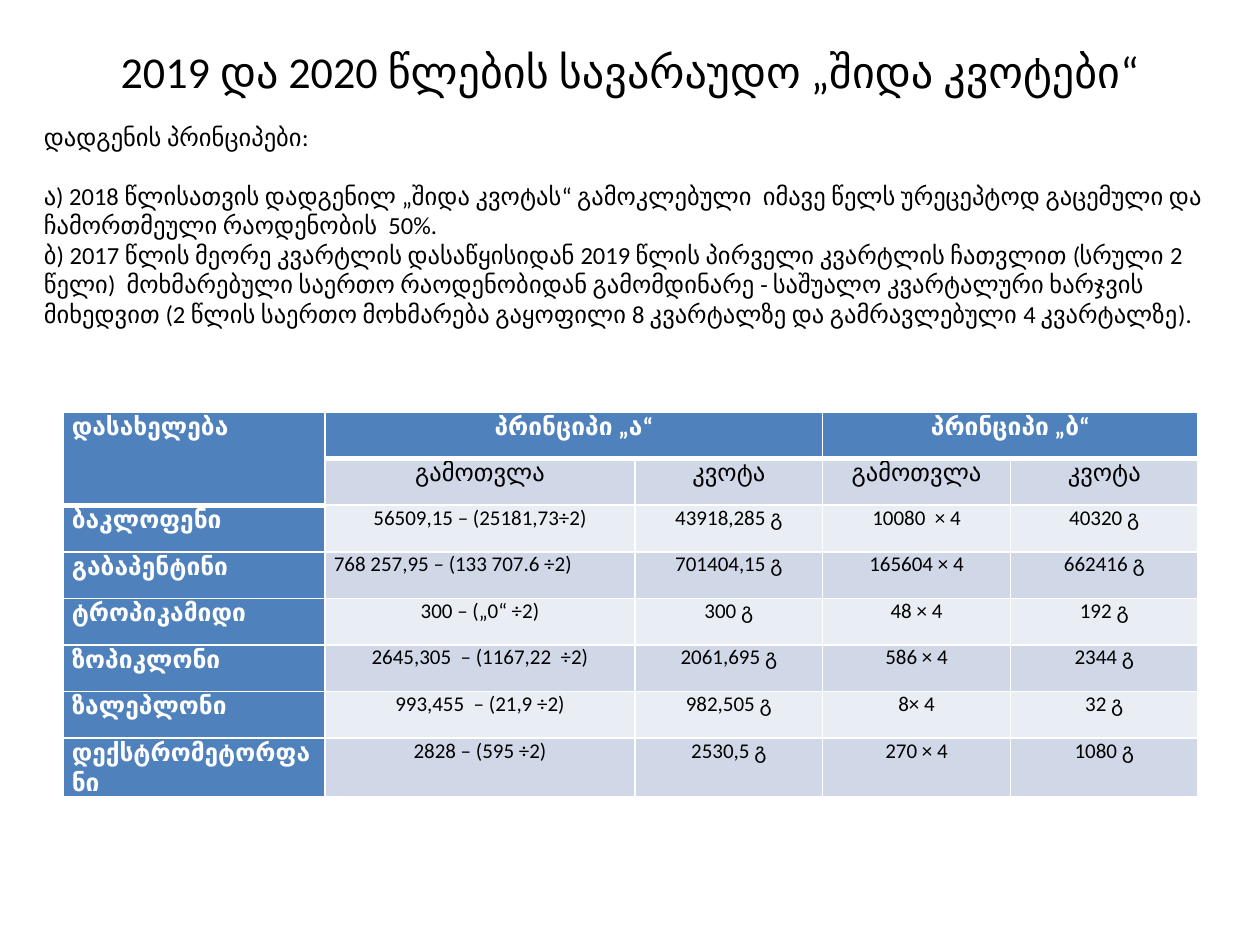
from dataclasses import dataclass

from lxml import etree
from pptx import Presentation
from pptx import util as u
from pptx.dml.color import RGBColor
from pptx.enum import text
from pptx.oxml import ns


@dataclass(frozen=True)
class Theme:
    font: str = "Calibri"
    ink: str = "000000"
    white: str = "FFFFFF"
    head: str = "4F81BD"
    bands: tuple = ("D0D8E8", "E9EDF4")
    title: float = 25.2
    body: float = 14
    value: float = 12
    rule: float = 1
    head_rule: float = 3


T = Theme()
CENTER, JUSTIFY = text.PP_ALIGN.CENTER, text.PP_ALIGN.JUSTIFY

TITLE = "2019 და 2020 წლების სავარაუდო „შიდა კვოტები“"
INTRO = "დადგენის პრინციპები:"
PRINCIPLES = [
    "ა) 2018 წლისათვის დადგენილ „შიდა კვოტას“ გამოკლებული  იმავე წელს ურეცეპტოდ "
    "გაცემული და ჩამორთმეული რაოდენობის  50%.",
    "ბ) 2017 წლის მეორე კვარტლის დასაწყისიდან 2019 წლის პირველი კვარტლის ჩათვლით "
    "(სრული 2 წელი)  მოხმარებული საერთო რაოდენობიდან გამომდინარე - საშუალო "
    "კვარტალური ხარჯვის მიხედვით (2 წლის საერთო მოხმარება გაყოფილი 8 კვარტალზე და "
    "გამრავლებული 4 კვარტალზე).",
]
COLUMNS = [2.08, 2.46, 1.49, 1.49, 1.49]
ROW_HEIGHT = 0.37
GROUPS = {1: "პრინციპი „ა“", 3: "პრინციპი „ბ“"}
ROWS = [
    ["დასახელება", "გამოთვლა", "კვოტა", "გამოთვლა", "კვოტა"],
    ["ბაკლოფენი", "56509,15 – (25181,73÷2)", "43918,285 გ", "10080  × 4", "40320 გ"],
    ["გაბაპენტინი", "768 257,95 – (133 707.6 ÷2)", "701404,15 გ", "165604 × 4", "662416 გ"],
    ["ტროპიკამიდი", "300 – („0“ ÷2)", "300 გ", "48 × 4", "192 გ"],
    ["ზოპიკლონი", "2645,305  – (1167,22  ÷2)", "2061,695 გ", "586 × 4", "2344 გ"],
    ["ზალეპლონი", "993,455  – (21,9 ÷2)", "982,505 გ", "8× 4", "32 გ"],
    ["დექსტრომეტორფანი", "2828 – (595 ÷2)", "2530,5 გ", "270 × 4", "1080 გ"],
]
LEFT_ALIGNED = (3, 1)


def write(p, words, size=T.body, color=T.ink, bold=False, align=None, after=0):
    p.alignment = align
    p.space_before, p.space_after = u.Pt(0), u.Pt(after)
    r = p.add_run()
    r.text = words
    r.font.name, r.font.size, r.font.bold = T.font, u.Pt(size), bold
    r.font.color.rgb = RGBColor.from_string(color)


def place(sp, left, top, width, height):
    sp.left, sp.top = u.Inches(left), u.Inches(top)
    sp.width, sp.height = u.Inches(width), u.Inches(height)


def add_title(s):
    sp = s.shapes.title
    place(sp, 0.5, 0.3, 9, 0.53)
    tf = sp.text_frame
    tf.auto_size = text.MSO_AUTO_SIZE.NONE
    tf.vertical_anchor = text.MSO_ANCHOR.MIDDLE
    write(tf.paragraphs[0], TITLE, size=T.title, align=CENTER)


def add_principles(s):
    sp = s.shapes.add_textbox(*map(u.Inches, (0.25, 0.92, 9.5, 1.75)))
    tf = sp.text_frame
    tf.word_wrap = True
    write(tf.paragraphs[0], INTRO, after=1.2 * T.body)
    for words in PRINCIPLES:
        write(tf.add_paragraph(), words)


def style_cell(cell, fill, bottom=T.rule):
    """Set margins, white borders and fill; borders go first in the cell's XML."""
    cell.margin_left = cell.margin_right = u.Inches(0.07)
    cell.margin_top = cell.margin_bottom = 0
    tcPr = cell._tc.get_or_add_tcPr()
    for side in "LRTB":
        width = bottom if side == "B" else T.rule
        ln = etree.SubElement(tcPr, ns.qn(f"a:ln{side}"), w=str(int(u.Pt(width))))
        solid = etree.SubElement(ln, ns.qn("a:solidFill"))
        etree.SubElement(solid, ns.qn("a:srgbClr"), val=T.white)
    cell.fill.solid()
    cell.fill.fore_color.rgb = RGBColor.from_string(fill)


def add_quota_table(s):
    n_rows, n_cols = len(ROWS) + 1, len(COLUMNS)
    frame = s.shapes.add_table(n_rows, n_cols, u.Inches(0.5), u.Inches(3.27),
                               u.Inches(sum(COLUMNS)), u.Inches(ROW_HEIGHT * n_rows))
    table = frame.table
    for col, width in zip(table.columns, COLUMNS):
        col.width = u.Inches(width)

    for i in range(n_rows):
        for j in range(n_cols):
            is_head = i == 0 or j == 0
            thick = i == 0 or (i, j) == (1, 0)
            style_cell(table.cell(i, j), T.head if is_head else T.bands[(i - 1) % 2],
                       T.head_rule if thick else T.rule)

    table.cell(0, 0).merge(table.cell(1, 0))
    for j, words in GROUPS.items():
        table.cell(0, j).merge(table.cell(0, j + 1))
        write(table.cell(0, j).text_frame.paragraphs[0], words,
              color=T.white, bold=True, align=CENTER)

    for i, row in enumerate(ROWS, start=1):
        for j, words in enumerate(row):
            if j == 0:
                cell = table.cell(0 if i == 1 else i, 0)
                look = dict(color=T.white, bold=True, align=JUSTIFY)
            else:
                cell = table.cell(i, j)
                look = dict(size=T.body if i == 1 else T.value,
                            align=JUSTIFY if (i, j) == LEFT_ALIGNED else CENTER)
            write(cell.text_frame.paragraphs[0], words, **look)


def main():
    prs = Presentation()
    prs.slide_width, prs.slide_height = u.Inches(10), u.Inches(7.5)
    s = prs.slides.add_slide(prs.slide_layouts.get_by_name("Title Only"))
    add_title(s)
    add_principles(s)
    add_quota_table(s)
    prs.save("out.pptx")


if __name__ == "__main__":
    main()
